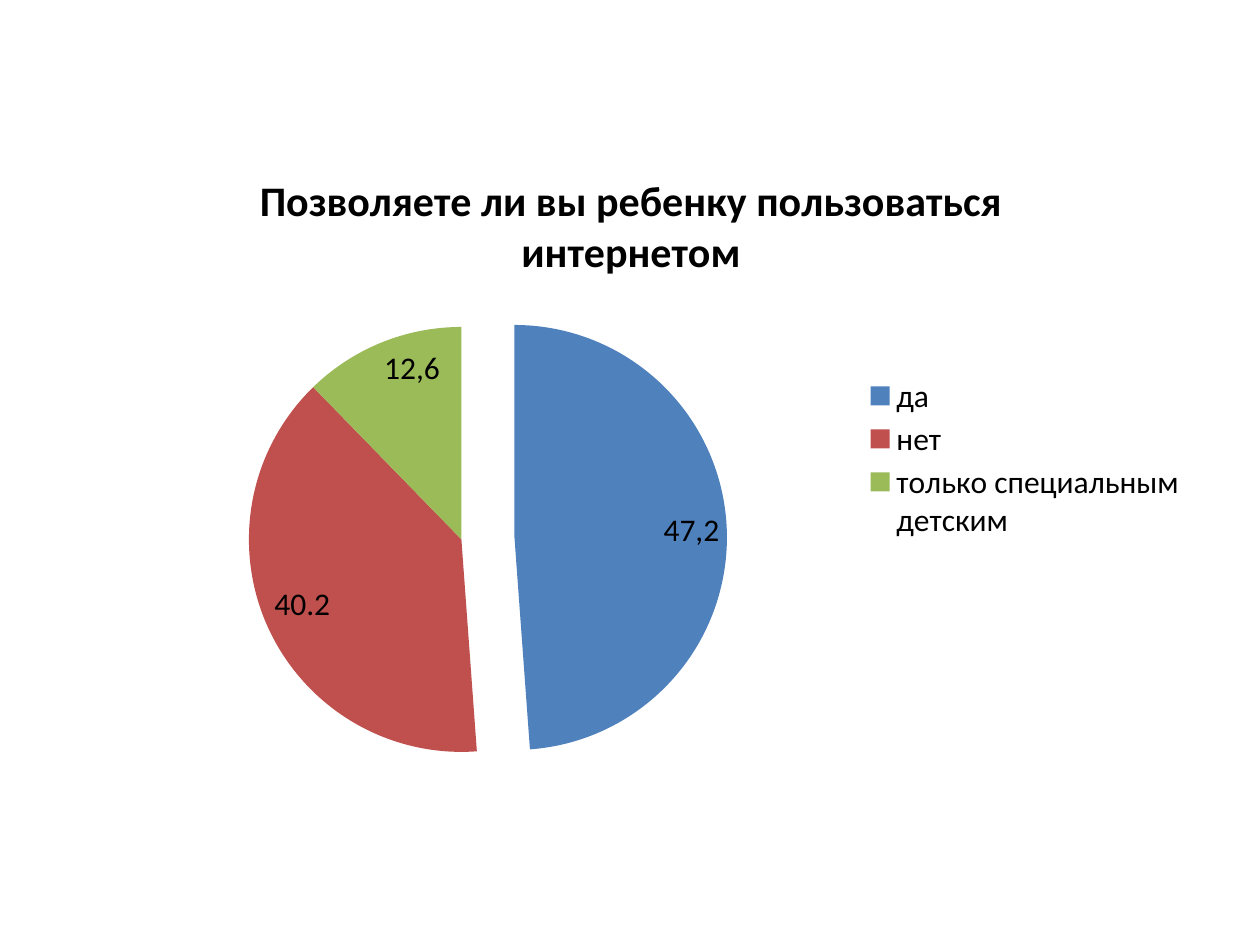
from lxml import etree
from pptx import Presentation
from pptx.chart.data import CategoryChartData
from pptx.dml.color import RGBColor
from pptx.enum.chart import XL_CHART_TYPE, XL_LABEL_POSITION, XL_LEGEND_POSITION
from pptx.oxml import parse_xml
from pptx.util import Emu, Pt

PIE = XL_CHART_TYPE.PIE
INSIDE_END = XL_LABEL_POSITION.INSIDE_END
RIGHT = XL_LEGEND_POSITION.RIGHT
CHART_NS = "http://schemas.openxmlformats.org/drawingml/2006/chart"

# Content
QUESTION = "Позволяете ли вы ребенку пользоваться интернетом"
# answer, value, colour, label text where it differs from the value
ANSWERS = [
    ("да", 50.5, "4F81BD", "47,2"),
    ("нет", 40.2, "C0504D", None),
    ("только специальным детским", 12.7, "9BBB59", "12,6"),
]
FONT = "Calibri"
BLACK = "000000"

# Geometry in px: left, top, width, height
PX = 914400 // 126
SLIDE_SIZE = (1260, 945)
CHART_BOX = (64, 145, 1134, 624)
PIE_BOX = (249, 327, 425, 425)
LEGEND_BOX = (860, 372, 330, 172)
PULLED_OUT_PERCENT = 25


def px(length):
    return Emu(length * PX)


def colour(hex_string):
    return RGBColor.from_string(hex_string)


def style_font(font, size, bold=False):
    font.name = FONT
    font.size = Pt(size)
    font.bold = bold
    font.color.rgb = colour(BLACK)


def write(frame, text, size, bold=False):
    span = frame.paragraphs[0].add_run()
    span.text = text
    style_font(span.font, size, bold)


def set_layout(parent, box, before, inner=False):
    """Place a chart part by hand, as fractions of the chart box."""
    left, top, width, height = CHART_BOX
    fractions = {
        "x": (box[0] - left) / width,
        "y": (box[1] - top) / height,
        "w": box[2] / width,
        "h": box[3] / height,
    }
    settings = [("layoutTarget", "inner")] if inner else []
    settings += [("xMode", "edge"), ("yMode", "edge")]
    settings += [(name, f"{value:.4f}") for name, value in fractions.items()]
    layout = parse_xml(f'<c:layout xmlns:c="{CHART_NS}"><c:manualLayout/></c:layout>')
    for name, value in settings:
        etree.SubElement(layout[0], f"{{{CHART_NS}}}{name}", val=value)
    for old in parent.findall(f"{{{CHART_NS}}}layout"):
        parent.remove(old)
    parent.find(f"{{{CHART_NS}}}{before}").addprevious(layout)


deck = Presentation()
deck.slide_width, deck.slide_height = map(px, SLIDE_SIZE)
page = deck.slides.add_slide(deck.slide_layouts[6])

# Pie chart
data = CategoryChartData()
data.categories = [answer[0] for answer in ANSWERS]
data.add_series(QUESTION, [answer[1] for answer in ANSWERS])
chart = page.shapes.add_chart(PIE, *map(px, CHART_BOX), data).chart
style_font(chart.font, 18)

# Title
chart.has_title = True
write(chart.chart_title.text_frame, QUESTION, 24, bold=True)
chart.chart_title.include_in_layout = False

# Legend
chart.has_legend = True
chart.legend.position = RIGHT
chart.legend.include_in_layout = False
style_font(chart.legend.font, 18)
set_layout(chart.legend._element, LEGEND_BOX, "overlay")

# Slices and value labels
plot = chart.plots[0]
plot.vary_by_categories = True
series = plot.series[0]
labels = series.data_labels
labels.show_value = True
labels.position = INSIDE_END
style_font(labels.font, 18)
for index, (_, _, fill, label_text) in enumerate(ANSWERS):
    point = series.points[index]
    point.format.fill.solid()
    point.format.fill.fore_color.rgb = colour(fill)
    if label_text:
        write(point.data_label.text_frame, label_text, 18)
        point.data_label.position = INSIDE_END

# The first slice is pulled out
first_slice = series._element.find(f"{{{CHART_NS}}}dPt")
explosion = parse_xml(f'<c:explosion xmlns:c="{CHART_NS}" val="{PULLED_OUT_PERCENT}"/>')
first_slice.find(f"{{{CHART_NS}}}spPr").addprevious(explosion)
set_layout(plot._element.getparent(), PIE_BOX, "pieChart", inner=True)

deck.save("out.pptx")
